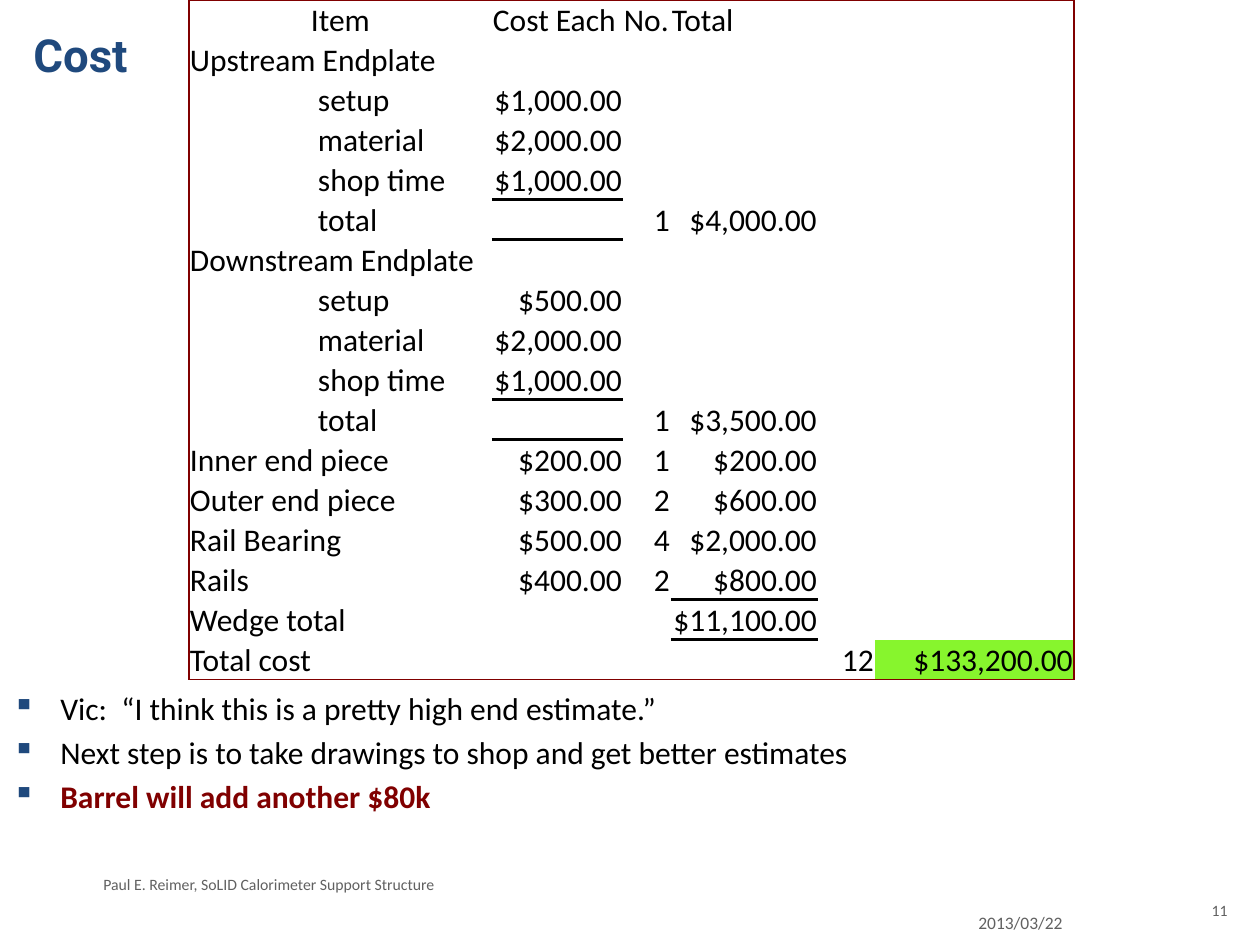
from dataclasses import dataclass

from lxml import etree
from pptx import Presentation
from pptx.dml.color import RGBColor
from pptx.enum.text import MSO_ANCHOR, PP_ALIGN
from pptx.oxml.ns import qn
from pptx.util import Emu, Pt

LEFT, CENTER, RIGHT = PP_ALIGN.LEFT, PP_ALIGN.CENTER, PP_ALIGN.RIGHT
TOP, BOTTOM = MSO_ANCHOR.TOP, MSO_ANCHOR.BOTTOM
EMU_PER_PX = 914400 / 126
NO_GRID_STYLE = "{2D5ABB26-0587-4C30-8999-92F81FD0307C}"


@dataclass(frozen=True)
class Theme:
    heading_font: str = "Roboto"
    body_font: str = "Calibri"
    navy: str = "1F497D"
    black: str = "000000"
    maroon: str = "800000"
    gray: str = "616161"
    green: str = "87F52D"
    title_size: int = 26
    body_size: int = 18
    date_size: int = 10
    footer_size: int = 9
    frame_width: int = 1
    rule_width: int = 2


def px(length):
    return Emu(round(length * EMU_PER_PX))


class SlideBuilder:
    def __init__(self, slide, theme):
        self.slide = slide
        self.theme = theme

    def style(self, paragraph, size, color, bold=False, font=None, align=LEFT):
        paragraph.alignment = align
        paragraph.font.name = font or self.theme.body_font
        paragraph.font.size = Pt(size)
        paragraph.font.bold = bold
        paragraph.font.color.rgb = RGBColor.from_string(color)

    def frame(self, left, top, width, height):
        shape = self.slide.shapes.add_textbox(px(left), px(top), px(width), px(height))
        shape.text_frame.word_wrap = True
        shape.text_frame.vertical_anchor = TOP
        return shape.text_frame

    def text(self, box, text, size, color, **style):
        paragraph = self.frame(*box).paragraphs[0]
        paragraph.text = text
        self.style(paragraph, size, color, **style)

    def bullets(self, box, items, indent):
        frame = self.frame(*box)
        for index, (text, color, bold) in enumerate(items):
            paragraph = frame.add_paragraph() if index else frame.paragraphs[0]
            paragraph.text = text
            properties = paragraph._p.get_or_add_pPr()
            properties.set("marL", str(px(indent)))
            properties.set("indent", str(-px(indent)))
            bullet_color = etree.SubElement(properties, qn("a:buClr"))
            etree.SubElement(bullet_color, qn("a:srgbClr"), val=self.theme.navy)
            etree.SubElement(properties, qn("a:buChar"), char="▪")
            if index:
                paragraph.space_before = Pt(self.theme.body_size * 0.2)
            self.style(paragraph, self.theme.body_size, color, bold)

    def border(self, cell, side, color, width):
        line = etree.SubElement(cell._tc.get_or_add_tcPr(), qn(f"a:ln{side}"), w=str(Pt(width)))
        fill = etree.SubElement(line, qn("a:solidFill"))
        etree.SubElement(fill, qn("a:srgbClr"), val=color)

    def cell(self, cell, text, align, borders, fill):
        cell.margin_left = cell.margin_right = cell.margin_top = px(1)
        cell.margin_bottom = 0
        cell.vertical_anchor = BOTTOM
        paragraph = cell.text_frame.paragraphs[0]
        paragraph.text = text
        self.style(paragraph, self.theme.body_size, self.theme.black, align=align)
        for side in "LRTB":
            if side in borders:
                self.border(cell, side, *borders[side])
        if fill:
            cell.fill.solid()
            cell.fill.fore_color.rgb = RGBColor.from_string(fill)
        else:
            cell.fill.background()

    def table(self, left, top, widths, row_height, rows, merged, ruled, highlighted):
        """Outer frame all round; a rule runs below each ruled cell."""
        count = len(rows)
        table = self.slide.shapes.add_table(
            count, len(widths), px(left), px(top), px(sum(widths)), px(row_height * count)
        ).table
        table.first_row = table.horz_banding = False
        table._tbl.tblPr.find(qn("a:tableStyleId")).text = NO_GRID_STYLE
        for column, width in zip(table.columns, widths):
            column.width = px(width)
        for row in table.rows:
            row.height = px(row_height)
        for row in merged:
            table.cell(row, 0).merge(table.cell(row, 1))

        outline = (self.theme.maroon, self.theme.frame_width)
        rule = (self.theme.black, self.theme.rule_width)
        last_row, last_column = count - 1, len(widths) - 1
        for row, values in enumerate(rows):
            for column in range(len(widths)):
                edges = {"L": column == 0, "R": column == last_column,
                         "T": row == 0, "B": row == last_row}
                borders = {side: outline for side, is_edge in edges.items() if is_edge}
                if (row, column) in ruled:
                    borders["B"] = rule
                if (row - 1, column) in ruled:
                    borders["T"] = rule
                if row == 0:
                    align = CENTER if column == 0 else LEFT
                else:
                    align = LEFT if column < 2 else RIGHT
                fill = self.theme.green if (row, column) in highlighted else None
                self.cell(table.cell(row, column), values.get(column, ""), align, borders, fill)


# Table columns
ITEM, DETAIL, EACH, NUMBER, TOTAL, WEDGES, GRAND_TOTAL = range(7)


def endplate(name, setup, total):
    return [
        {ITEM: name},
        {DETAIL: "setup", EACH: setup},
        {DETAIL: "material", EACH: "$2,000.00"},
        {DETAIL: "shop time", EACH: "$1,000.00"},
        {DETAIL: "total", NUMBER: "1", TOTAL: total},
    ]


def part(name, each, number, total):
    return {ITEM: name, EACH: each, NUMBER: number, TOTAL: total}


def main():
    theme = Theme()
    presentation = Presentation()
    presentation.slide_width, presentation.slide_height = px(1260), px(945)
    slide = presentation.slides.add_slide(presentation.slide_layouts[6])
    builder = SlideBuilder(slide, theme)

    # Title
    builder.text((21, 21, 1134, 116), "Cost", theme.title_size, theme.navy,
                 bold=True, font=theme.heading_font)

    # Remarks
    builder.bullets((0, 683, 1260, 136), [
        ("Vic:  “I think this is a pretty high end estimate.”", theme.black, False),
        ("Next step is to take drawings to shop and get better estimates", theme.black, False),
        ("Barrel will add another $80k", theme.maroon, True),
    ], indent=48)

    # Footer
    builder.text((91, 869, 819, 32), "Paul E. Reimer, SoLID Calorimeter Support Structure",
                 theme.footer_size, theme.gray)
    builder.text((1187, 895, 53, 50), "11", theme.footer_size, theme.gray, align=RIGHT)
    builder.text((966, 906, 189, 29), "2013/03/22", theme.date_size, theme.gray)

    # Cost table
    rows = [
        {ITEM: "Item", EACH: "Cost Each", NUMBER: "No.", TOTAL: "Total"},
        *endplate("Upstream Endplate", "$1,000.00", "$4,000.00"),
        *endplate("Downstream Endplate", "$500.00", "$3,500.00"),
        part("Inner end piece", "$200.00", "1", "$200.00"),
        part("Outer end piece", "$300.00", "2", "$600.00"),
        part("Rail Bearing", "$500.00", "4", "$2,000.00"),
        part("Rails", "$400.00", "2", "$800.00"),
        {ITEM: "Wedge total", TOTAL: "$11,100.00"},
        {ITEM: "Total cost", WEDGES: "12", GRAND_TOTAL: "$133,200.00"},
    ]
    last = len(rows) - 1
    builder.table(
        189, 0, [128, 175, 131, 48, 147, 57, 199], 40, rows,
        merged=[row for row in range(last) if ITEM in rows[row]],
        ruled={(4, EACH), (9, EACH), (14, TOTAL)},
        highlighted={(last, GRAND_TOTAL)},
    )

    presentation.save("out.pptx")


if __name__ == "__main__":
    main()
